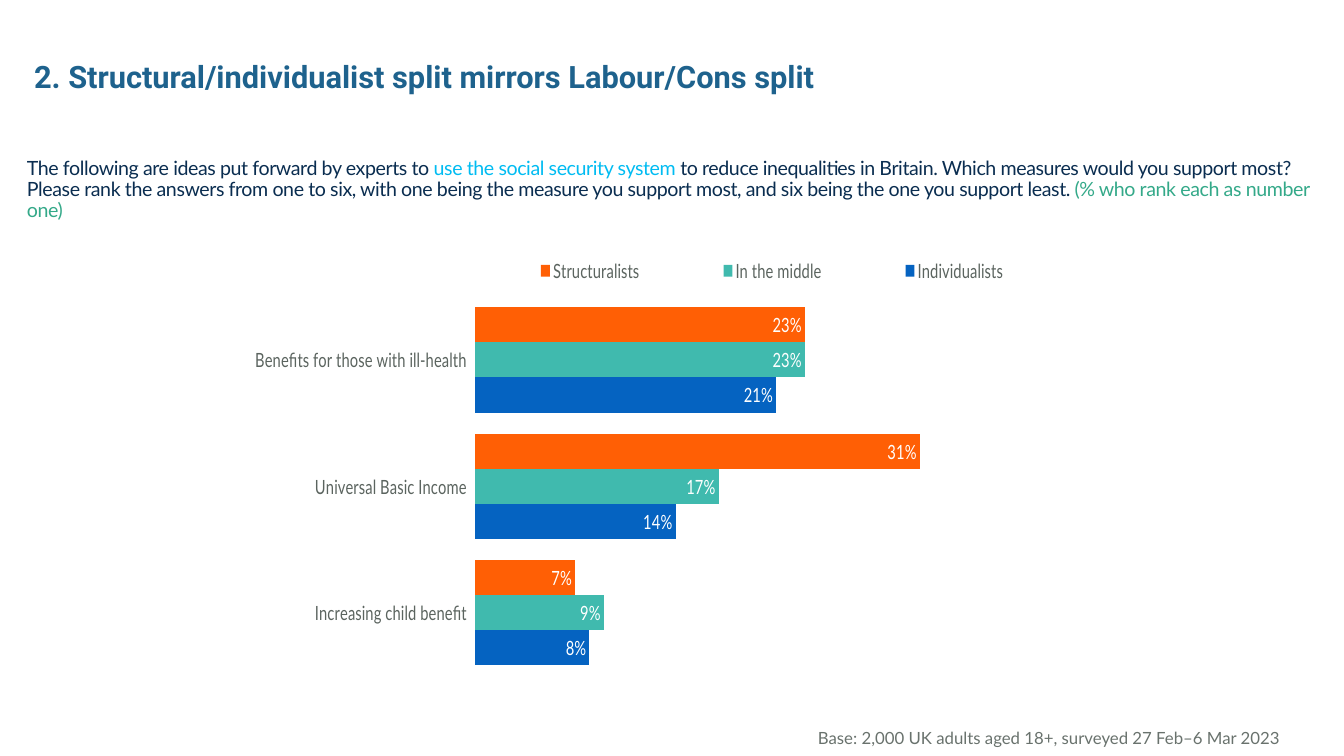
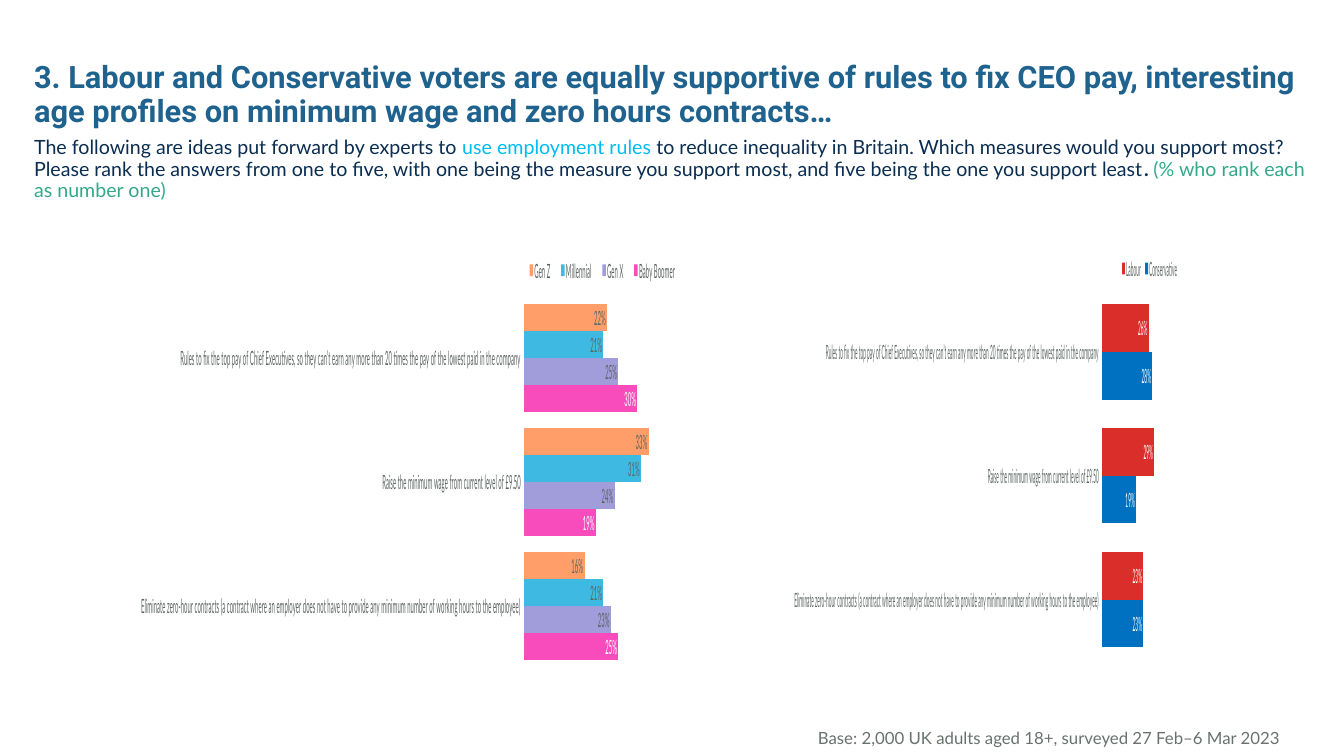
from dataclasses import dataclass

from lxml import etree
from pptx import Presentation
from pptx.chart import data as chart_data
from pptx.dml import color as dml
from pptx.enum import chart as chart_enum, text as text_enum
from pptx.oxml import ns
from pptx.util import Pt


@dataclass(frozen=True)
class Theme:
    # Colours
    title: str = "1E628D"
    body: str = "0A2D50"
    topic: str = "00BCF2"
    note: str = "34A989"
    base: str = "69726D"
    label: str = "5B645F"
    white: str = "FFFFFF"
    # Fonts and sizes
    heading_font: str = "Roboto"
    text_font: str = "Lato"
    title_size: float = 22
    text_size: float = 14
    base_size: float = 12


THEME = Theme()
BASE_TEXT = "Base: 2,000 UK adults aged 18+, surveyed 27 Feb–6 Mar 2023"
RANK_NOTE = "(% who rank each as number one)"
QUESTION_START = "The following are ideas put forward by experts to "
FULL_PLOT = (0.02, 0.105, 0.917, 0.868)
NARROW_PLOT = (0.02, 0.105, 0.553, 0.868)
WIDE_LEGEND = (0, 0.01, 0.99, 0.07)
CENTRED_LEGEND = (0.2, 0.02, 0.62, 0.07)

SECURITY_MEASURES = [
    "Increasing child benefit",
    "Universal Basic Income",
    "Benefits for those with ill-health",
]
EMPLOYMENT_MEASURES = [
    "Eliminate zero-hour contracts (a contract where an employer does not have to "
    "provide any minimum number of working hours to the employee)",
    "Raise the minimum wage from current level of £9.50",
    "Rules to fix the top pay of Chief Executives, so they can’t earn any more than "
    "20 times the pay of the lowest paid in the company",
]

# Series: name, values, bar colour, label colour
ATTITUDES = [
    ("Individualists", (0.08, 0.14, 0.21), "0563C1", THEME.white),
    ("In the middle", (0.09, 0.17, 0.23), "40BAAE", THEME.white),
    ("Structuralists", (0.07, 0.31, 0.23), "FF5F05", THEME.white),
]
PARTIES = [
    ("Conservative", (0.23, 0.19, 0.28), "0070C0", THEME.white),
    ("Labour", (0.23, 0.29, 0.26), "DA2E2A", THEME.white),
]
GENERATIONS = [
    ("Baby Boomer", (0.25, 0.19, 0.3), "F84CBC", THEME.white),
    ("Gen X", (0.23, 0.24, 0.25), "A09DDA", THEME.label),
    ("Millennial", (0.21, 0.31, 0.21), "3EB9E1", THEME.label),
    ("Gen Z", (0.16, 0.33, 0.22), "FF9E69", THEME.label),
]


def rgb(value):
    return dml.RGBColor.from_string(value)


def style_font(font, size, color, name=THEME.text_font, bold=False):
    font.size = Pt(size)
    font.name = name
    font.bold = bold
    font.color.rgb = rgb(color)


def add_text(slide, box, runs, size, name=THEME.text_font, align=None, spacing=None):
    """Add one paragraph; each run is (text, colour, bold)."""
    shape = slide.shapes.add_textbox(*map(Pt, box))
    frame = shape.text_frame
    frame.word_wrap = True
    paragraph = frame.paragraphs[0]
    paragraph.line_spacing = 0.9
    paragraph.alignment = align
    for content, color, bold in runs:
        run = paragraph.add_run()
        run.text = content
        style_font(run.font, size, color, name, bold)
        if spacing is not None:
            run.font._element.set("spc", str(round(spacing * 100)))


def add_question(slide, box, runs, spacing=None):
    add_text(slide, box, [(QUESTION_START, THEME.body, False), *runs,
                          (RANK_NOTE, THEME.note, False)],
             THEME.text_size, spacing=spacing)


def add_page(presentation, title):
    """Blank slide with the shared title and survey base."""
    slide = presentation.slides.add_slide(presentation.slide_layouts[6])
    add_text(slide, (17.3, 41, 926.6, 31), [(title, THEME.title, True)],
             THEME.title_size, THEME.heading_font)
    add_text(slide, (256.3, 517.7, 665.3, 15), [(BASE_TEXT, THEME.base, False)],
             THEME.base_size, align=text_enum.PP_ALIGN.RIGHT)
    return slide


def manual_layout(box, inner=False):
    layout = etree.Element(ns.qn("c:layout"))
    manual = etree.SubElement(layout, ns.qn("c:manualLayout"))
    settings = [("layoutTarget", "inner")] if inner else []
    settings += [("xMode", "edge"), ("yMode", "edge")]
    settings += zip("xywh", box)
    for tag, value in settings:
        etree.SubElement(manual, ns.qn(f"c:{tag}")).set("val", str(value))
    return layout


def place_plot(chart, box):
    area = chart._chartSpace.chart.plotArea
    for layout in area.findall(ns.qn("c:layout")):
        area.remove(layout)
    area.insert(0, manual_layout(box, inner=True))


def add_legend(chart, position, box):
    chart.has_legend = True
    legend = chart.legend
    legend.position = position
    legend.include_in_layout = False
    style_font(legend.font, THEME.text_size, THEME.label)
    element = legend._element
    for layout in element.findall(ns.qn("c:layout")):
        element.remove(layout)
    element.find(ns.qn("c:legendPos")).addnext(manual_layout(box))


def style_axes(chart, maximum):
    values = chart.value_axis
    values.minimum_scale, values.maximum_scale = 0, maximum
    values.has_major_gridlines = False
    values.visible = False
    categories = chart.category_axis
    categories.format.line.fill.background()
    categories.major_tick_mark = chart_enum.XL_TICK_MARK.OUTSIDE
    style_font(categories.tick_labels.font, THEME.text_size, THEME.label)
    # Automatic rotation keeps long category names on one line
    body = categories._element.find(ns.qn("c:txPr")).find(ns.qn("a:bodyPr"))
    body.set("rot", "-60000000")
    body.set("vert", "horz")


def add_bars(slide, box, measures, groups, maximum, plot_box=FULL_PLOT,
             legend_box=WIDE_LEGEND, legend_side=chart_enum.XL_LEGEND_POSITION.RIGHT):
    data = chart_data.CategoryChartData(number_format="0%")
    data.categories = measures
    for name, values, _, _ in groups:
        data.add_series(name, values)
    chart = slide.shapes.add_chart(
        chart_enum.XL_CHART_TYPE.BAR_CLUSTERED, *map(Pt, box), data).chart
    chart.has_title = False
    style_font(chart.font, THEME.text_size, THEME.label)
    style_axes(chart, maximum)
    place_plot(chart, plot_box)
    add_legend(chart, legend_side, legend_box)

    # Bars and their values
    plot = chart.plots[0]
    plot.gap_width = 60
    plot.vary_by_categories = False
    for series, (_, _, fill, label_color) in zip(plot.series, groups):
        series.format.fill.solid()
        series.format.fill.fore_color.rgb = rgb(fill)
        series.invert_if_negative = False
        labels = series.data_labels
        labels.show_value = True
        labels.position = chart_enum.XL_LABEL_POSITION.INSIDE_END
        labels.number_format = "0%"
        labels.number_format_is_linked = False
        style_font(labels.font, THEME.text_size, label_color)


def add_security_slide(presentation):
    slide = add_page(presentation,
                     "2. Structural/individualist split mirrors Labour/Cons split")
    add_question(slide, (12.2, 109.4, 936, 45.4), [
        ("use the social security system ", THEME.topic, False),
        ("to reduce inequalities in Britain. Which measures would you support most? "
         "Please rank the answers from one to six, with one being the measure you "
         "support most, and six being the one you support least. ", THEME.body, False),
    ], spacing=-0.3)
    add_bars(slide, (182.2, 179.3, 595.4, 311.8), SECURITY_MEASURES, ATTITUDES, 0.4)


def add_employment_slide(presentation):
    slide = add_page(presentation,
                     "3. Labour and Conservative voters are equally supportive of rules "
                     "to fix CEO pay, interesting age profiles on minimum wage and zero "
                     "hours contracts…")
    add_question(slide, (17.3, 95, 931, 45.4), [
        ("use employment rules ", THEME.topic, False),
        ("to reduce inequality in Britain. Which measures would you support most? "
         "Please rank the answers from one to five, with one being the measure you "
         "support most, and five being the one you support least", THEME.body, False),
        (". ", THEME.body, True),
    ])
    add_bars(slide, (567.4, 175, 288, 306), EMPLOYMENT_MEASURES, PARTIES, 0.3,
             NARROW_PLOT, CENTRED_LEGEND, chart_enum.XL_LEGEND_POSITION.TOP)
    add_bars(slide, (100.8, 179.3, 388.8, 306), EMPLOYMENT_MEASURES, GENERATIONS, 0.4)


def main():
    presentation = Presentation()
    presentation.slide_width, presentation.slide_height = Pt(960), Pt(540)
    add_security_slide(presentation)
    add_employment_slide(presentation)
    presentation.save("out.pptx")


if __name__ == "__main__":
    main()
